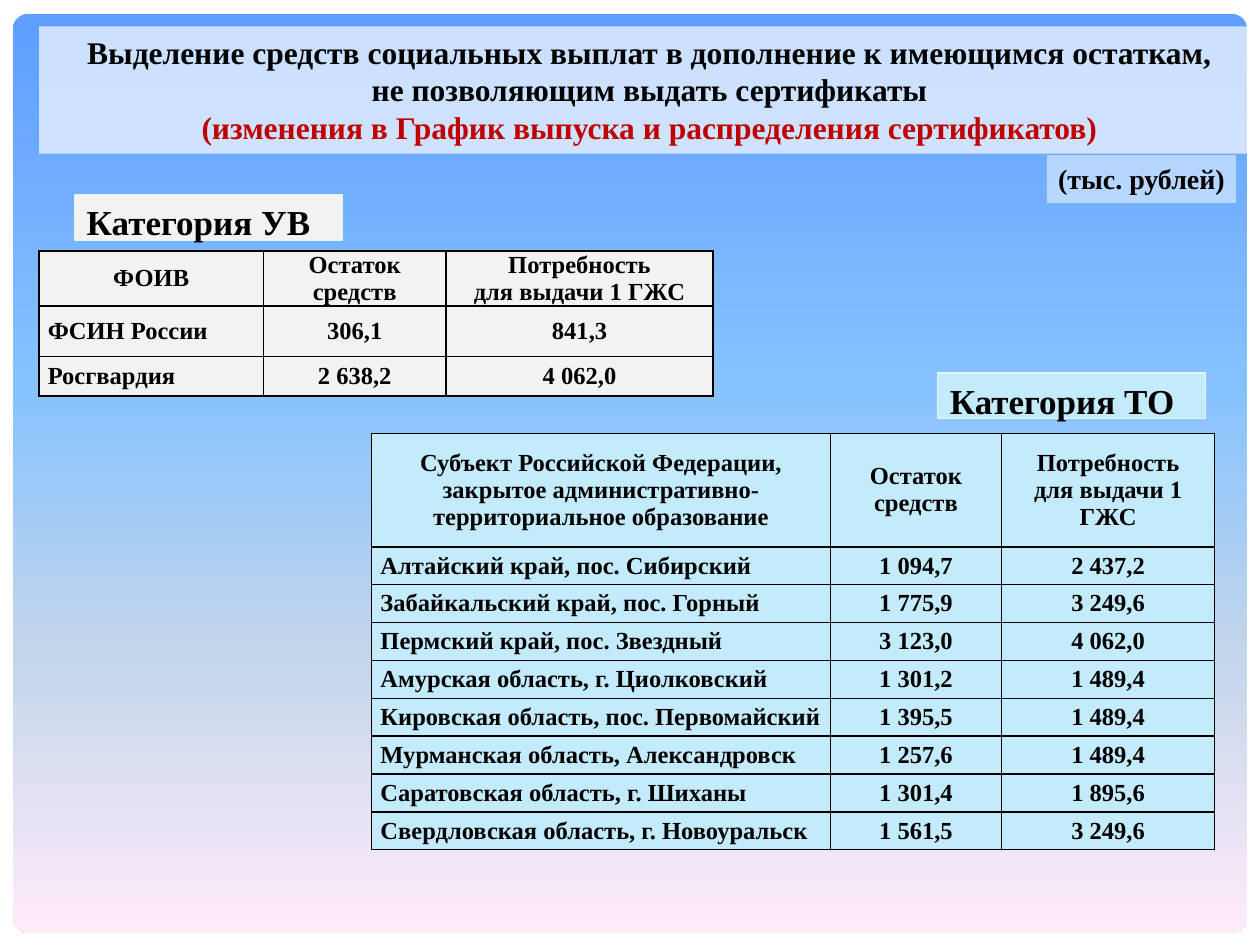
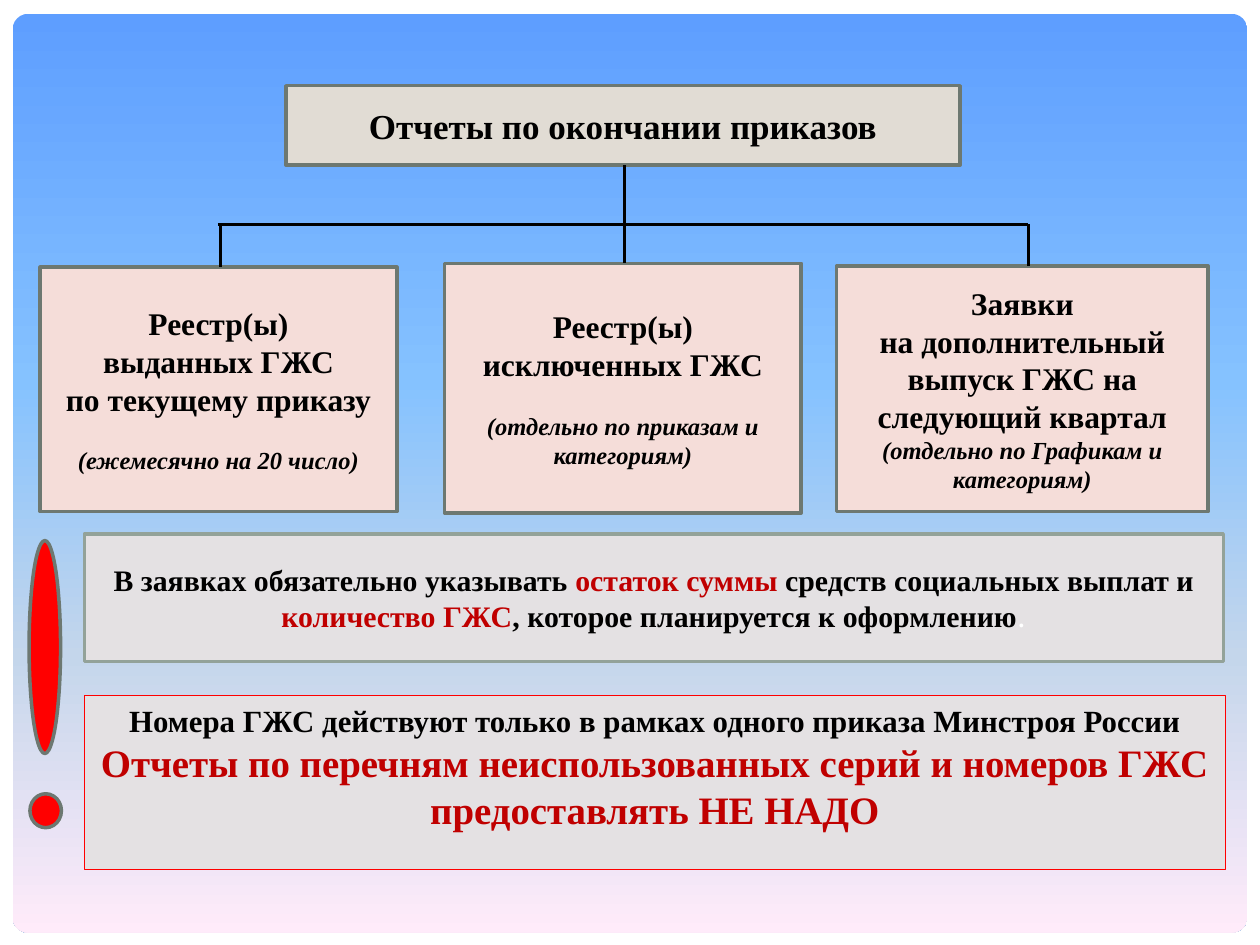
from collections import namedtuple

from lxml.etree import SubElement
from pptx import Presentation
from pptx.dml.color import RGBColor
from pptx.enum.shapes import MSO_CONNECTOR, MSO_SHAPE
from pptx.enum.text import MSO_ANCHOR, PP_ALIGN
from pptx.oxml.ns import qn
from pptx.util import Pt

Box = namedtuple("Box", "left top width height")
Run = namedtuple("Run", "text size color italic bold font")

FONT = "Times New Roman"
BLACK, WHITE, CRIMSON, RED = "000000", "FFFFFF", "C00000", "FF0000"
PALE_GREY, PALE_CYAN, LABEL_EDGE = "F2F2F2", "C3EBFB", "E3F6FD"
ROSE, SAND, NOTE_GREY = "F5DDD9", "E1DCD4", "E4E1E3"
SLATE, SAGE = "6D7871", "93A299"
SKY = [(0, "5E9EFF"), (40, "85C2FF"), (70, "C4D6EB"), (100, "FFEBFA")]

NEED_PER_CERTIFICATE = "Потребность\nдля выдачи 1 ГЖС"
AGENCIES = [
    ("ФОИВ", "Остаток средств", NEED_PER_CERTIFICATE),
    ("ФСИН России", "306,1", "841,3"),
    ("Росгвардия", "2 638,2", "4 062,0"),
]
TERRITORIES = [
    ("Субъект Российской Федерации, закрытое административно-территориальное образование",
     "Остаток средств", NEED_PER_CERTIFICATE),
    ("Алтайский край, пос. Сибирский", "1 094,7", "2 437,2"),
    ("Забайкальский край, пос. Горный", "1 775,9", "3 249,6"),
    ("Пермский край, пос. Звездный", "3 123,0", "4 062,0"),
    ("Амурская область, г. Циолковский", "1 301,2", "1 489,4"),
    ("Кировская область, пос. Первомайский", "1 395,5", "1 489,4"),
    ("Мурманская область, Александровск", "1 257,6", "1 489,4"),
    ("Саратовская область, г. Шиханы", "1 301,4", "1 895,6"),
    ("Свердловская область, г. Новоуральск", "1 561,5", "3 249,6"),
]
REPORTS = [
    (Box(0, 103.7, 203.8, 139.7),
     ["Реестр(ы)", "выданных ГЖС", "по текущему приказу"],
     "(ежемесячно на 20 число)", 16),
    (Box(231.1, 101.5, 203.8, 142.6),
     ["Реестр(ы) исключенных ГЖС"],
     "(отдельно по приказам и категориям)", 16),
    (Box(455, 103, 212.4, 140.4),
     ["Заявки", "на дополнительный выпуск ГЖС на следующий квартал"],
     "(отдельно по Графикам и категориям)", 0),
]


def rgb(value):
    """Turn a hex string into a colour."""
    return RGBColor.from_string(value)


def run(text, size, color=BLACK, italic=False, bold=True, font=FONT):
    """Describe one run of text."""
    return Run(text, size, color, italic, bold, font)


def place(box):
    """Give the four lengths of a box in points."""
    return [Pt(length) for length in box]


def within(area, part):
    """Move a part into the coordinates of its area."""
    return Box(area.left + part.left, area.top + part.top, part.width, part.height)


def write(frame, paragraphs, align=PP_ALIGN.CENTER):
    """Write paragraphs of runs into a text frame."""
    for index, runs in enumerate(paragraphs):
        paragraph = frame.add_paragraph() if index else frame.paragraphs[0]
        paragraph.alignment = align
        for item in runs:
            piece = paragraph.add_run()
            piece.text = item.text
            font = piece.font
            font.size, font.name = Pt(item.size), item.font
            font.bold, font.italic = item.bold, item.italic
            font.color.rgb = rgb(item.color)


def add_block(slide, box, fill, edge=None, edge_width=2, kind=MSO_SHAPE.RECTANGLE, opacity=100):
    """Draw a filled preset shape."""
    block = slide.shapes.add_shape(kind, *place(box))
    block.shadow.inherit = False
    block.fill.solid()
    block.fill.fore_color.rgb = rgb(fill)
    if opacity < 100:
        tint = block._element.spPr.find(qn("a:solidFill"))[0]
        SubElement(tint, qn("a:alpha"), val=str(opacity * 1000))
    if edge:
        block.line.color.rgb = rgb(edge)
        block.line.width = Pt(edge_width)
    else:
        block.line.fill.background()
    return block


def add_text_block(slide, box, paragraphs, fill, anchor=MSO_ANCHOR.MIDDLE,
                   align=PP_ALIGN.CENTER, wrap=True, **look):
    """Draw a rectangle that holds text."""
    frame = add_block(slide, box, fill, **look).text_frame
    frame.word_wrap = wrap
    frame.vertical_anchor = anchor
    write(frame, paragraphs, align)
    return frame


def add_line(slide, area, start, end):
    """Draw a black line between two points of an area."""
    ends = [Pt(area[axis] + point[axis]) for point in (start, end) for axis in (0, 1)]
    line = slide.shapes.add_connector(MSO_CONNECTOR.STRAIGHT, *ends)
    line.line.color.rgb = rgb(BLACK)
    line.line.width = Pt(1.75)
    SubElement(line._element.spPr, qn("a:effectLst"))


def add_slide(deck):
    """Add a blank slide with the rounded sky panel."""
    slide = deck.slides.add_slide(deck.slide_layouts[6])
    slide.background.fill.solid()
    slide.background.fill.fore_color.rgb = rgb(WHITE)
    panel = add_block(slide, Box(7.2, 7.9, 705.6, 525), WHITE, kind=MSO_SHAPE.ROUNDED_RECTANGLE)
    panel.adjustments[0] = 0.017
    panel.fill.gradient()
    panel.fill.gradient_angle = 270
    stops = panel._element.spPr.find(qn("a:gradFill")).find(qn("a:gsLst"))
    for stop in list(stops):
        stops.remove(stop)
    for position, color in SKY:
        stop = SubElement(stops, qn("a:gs"), pos=str(position * 1000))
        SubElement(stop, qn("a:srgbClr"), val=color)
    return slide


def style_cell(cell, fill):
    """Give a cell black borders, a fill and narrow margins."""
    properties = cell._tc.get_or_add_tcPr()
    for side in ("lnL", "lnR", "lnT", "lnB"):
        border = SubElement(properties, qn(f"a:{side}"), w=str(Pt(1)))
        ink = SubElement(border, qn("a:solidFill"))
        SubElement(ink, qn("a:srgbClr"), val=BLACK)
    cell.fill.solid()
    cell.fill.fore_color.rgb = rgb(fill)
    cell.vertical_anchor = MSO_ANCHOR.MIDDLE
    cell.margin_left = cell.margin_right = Pt(5)
    cell.margin_top = cell.margin_bottom = 0


def add_balance_table(slide, box, rows, widths, heights, fill):
    """Draw a table of balances and needs."""
    table = slide.shapes.add_table(len(rows), len(widths), *place(box)).table
    table.first_row = table.horz_banding = False
    for column, width in zip(table.columns, widths):
        column.width = Pt(width)
    for row_index, (values, height) in enumerate(zip(rows, heights)):
        table.rows[row_index].height = Pt(height)
        for column_index, value in enumerate(values):
            cell = table.cell(row_index, column_index)
            style_cell(cell, fill)
            is_name = row_index and not column_index
            lines = [[run(line, 14)] for line in value.split("\n")]
            write(cell.text_frame, lines, PP_ALIGN.LEFT if is_name else PP_ALIGN.CENTER)


def add_category(slide, box, name, fill):
    """Draw the label above a table."""
    add_text_block(slide, box, [[run(name, 20)]], fill, anchor=MSO_ANCHOR.TOP,
                   align=PP_ALIGN.LEFT, wrap=False, edge=LABEL_EDGE, edge_width=0.75)


def add_heading(slide, box):
    """Draw the title band with the unit label under its right end."""
    add_text_block(slide, box, [
        [run("Выделение средств социальных выплат в дополнение к имеющимся остаткам,", 18)],
        [run("не позволяющим выдать сертификаты", 18)],
        [run("(изменения в График выпуска и распределения сертификатов)", 18, CRIMSON)],
    ], WHITE, anchor=MSO_ANCHOR.TOP, opacity=68)
    unit = within(box, Box(576, 73.5, 108, 27.4))
    add_text_block(slide, unit, [[run("(тыс. рублей)", 16)]], WHITE,
                   anchor=MSO_ANCHOR.TOP, wrap=False, opacity=50)


def add_report_tree(slide, area):
    """Draw the root, its branches and the three reports."""
    rail, middle, left, right = 79.2, 334.1, 103, 564.5
    for box, title, note, gap in REPORTS:
        lines = [[run(line, 18)] for line in title] + [[run(note, 14, italic=True)]]
        frame = add_text_block(slide, within(area, box), lines, ROSE, edge=SLATE)
        frame.paragraphs[-1].space_before = Pt(gap)
    add_text_block(slide, within(area, Box(140.4, 0, 385.2, 45.4)),
                   [[run("Отчеты по окончании приказов", 20)]], SAND, edge=SLATE)
    add_line(slide, area, (left - 1.5, rail), (right, rail))
    add_line(slide, area, (middle, 45.4), (middle, REPORTS[1][0].top))
    add_line(slide, area, (left, rail), (left, REPORTS[0][0].top))
    add_line(slide, area, (right, rail), (right, REPORTS[2][0].top))


def add_exclamation(slide, area):
    """Draw a red exclamation mark."""
    for part in (Box(0, 0, 18, 121.7), Box(0.5, 144.7, 18, 19.4)):
        add_block(slide, within(area, part), RED, edge=SLATE, kind=MSO_SHAPE.OVAL)


def add_notes_on_requests(slide, area):
    """Draw the two grey reminders."""
    add_text_block(slide, within(area, Box(0, 0, 650.9, 72.7)), [[
        run("В заявках обязательно указывать ", 17),
        run("остаток суммы ", 17, CRIMSON),
        run("средств социальных выплат и ", 17),
        run("количество ГЖС", 17, CRIMSON),
        run(", которое планируется к оформлению", 17),
        run(".", 17, WHITE, bold=False, font="League Spartan"),
    ]], NOTE_GREY, edge=SAGE)
    add_text_block(slide, within(area, Box(0, 92.2, 652.3, 99.4)), [
        [run("Номера ГЖС действуют только в рамках одного приказа Минстроя России", 17.6)],
        [run("Отчеты по перечням неиспользованных серий и номеров ГЖС предоставлять НЕ НАДО",
             22.2, CRIMSON)],
    ], NOTE_GREY, anchor=MSO_ANCHOR.TOP, edge=RED, edge_width=0.75)


def build_balances(deck):
    """Build the slide of balances by category."""
    slide = add_slide(deck)
    add_balance_table(slide, Box(212.4, 247.7, 481.7, 238.3), TERRITORIES,
                      [262.1, 97.9, 121.7], [64.8] + [21.65] * 8, PALE_CYAN)
    add_balance_table(slide, Box(22.3, 143.3, 385.2, 82.9), AGENCIES,
                      [128.2, 104.4, 152.6], [31.5, 28.8, 22.6], PALE_GREY)
    add_heading(slide, Box(22.3, 15.1, 697.7, 72.7))
    add_category(slide, Box(42.5, 111.3, 153.4, 26), "Категория УВ", PALE_GREY)
    add_category(slide, Box(535.7, 213.1, 153.4, 26), "Категория ТО", PALE_CYAN)


def build_reports(deck):
    """Build the slide of reports due after the orders."""
    slide = add_slide(deck)
    add_report_tree(slide, Box(23, 49, 667.4, 244.1))
    add_notes_on_requests(slide, Box(48.2, 305.3, 652.3, 191.6))
    add_exclamation(slide, Box(16.6, 308.9, 18.5, 164.1))


def main():
    """Build the deck and save it."""
    deck = Presentation()
    deck.slide_width, deck.slide_height = Pt(720), Pt(540)
    build_balances(deck)
    build_reports(deck)
    deck.save("out.pptx")


if __name__ == "__main__":
    main()
